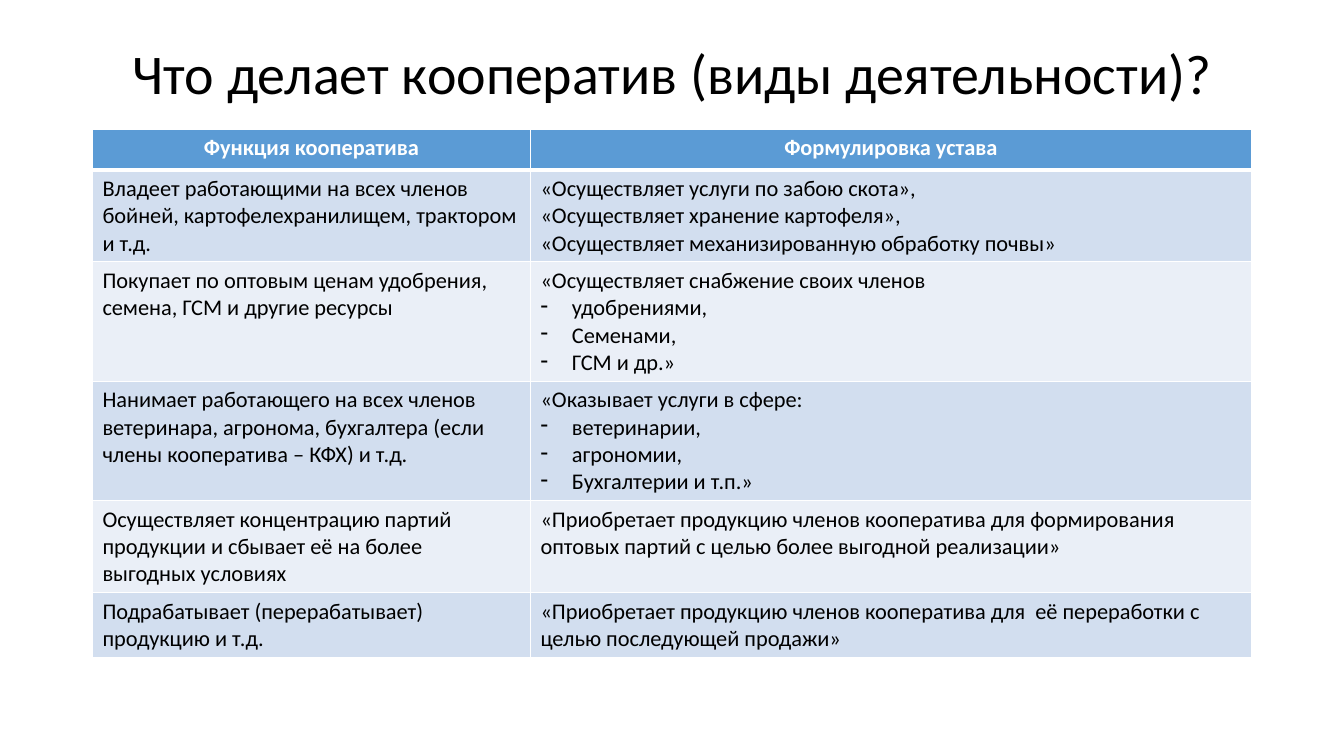
from dataclasses import dataclass

from lxml import etree
from pptx import Presentation
from pptx import util as u
from pptx.dml import color
from pptx.enum import text
from pptx.oxml import ns


@dataclass(frozen=True)
class Theme:
    font: str = "Calibri"
    title_size: int = 40
    table_size: int = 16
    ink: str = "000000"
    paper: str = "FFFFFF"
    header_fill: str = "5B9BD5"
    band_fills: tuple[str, str] = ("D2DEEF", "EAEFF7")
    thin_border: int = 1
    header_border: int = 3


@dataclass(frozen=True)
class Activity:
    function: str
    charter: tuple[str, ...]
    line_count: int
    items: tuple[str, ...] = ()


THEME = Theme()
LEFT, WIDTH = u.Cm(2.33), u.Cm(29.21)
COLUMN_WIDTHS = (u.Cm(11.04), u.Cm(18.17))
HEADER_HEIGHT = u.Cm(1.03)
LINE_HEIGHT, CELL_PADDING = u.Cm(0.69), u.Cm(0.25)
ITEM_INDENT = u.Cm(0.79)

TITLE = "Что делает кооператив (виды деятельности)?"
HEADINGS = ("Функция кооператива", "Формулировка устава")
ACTIVITIES = (
    Activity(
        "Владеет работающими на всех членов бойней, картофелехранилищем, трактором и т.д.",
        ("«Осуществляет услуги по забою скота»,",
         "«Осуществляет хранение картофеля»,",
         "«Осуществляет механизированную обработку почвы»"),
        3),
    Activity(
        "Покупает по оптовым ценам удобрения, семена, ГСМ и другие ресурсы",
        ("«Осуществляет снабжение своих членов",),
        4, ("удобрениями,", "Семенами,", "ГСМ и др.»")),
    Activity(
        "Нанимает работающего на всех членов ветеринара, агронома, бухгалтера "
        "(если члены кооператива – КФХ) и т.д.",
        ("«Оказывает услуги в сфере:",),
        4, ("ветеринарии,", "агрономии,", "Бухгалтерии и т.п.»")),
    Activity(
        "Осуществляет концентрацию партий продукции и сбывает её на более выгодных условиях",
        ("«Приобретает продукцию членов кооператива для формирования оптовых партий "
         "с целью более выгодной реализации»",),
        3),
    Activity(
        "Подрабатывает (перерабатывает) продукцию и т.д.",
        ("«Приобретает продукцию членов кооператива для  её переработки "
         "с целью последующей продажи»",),
        2),
)


def write_paragraph(paragraph, words: str, size: int, ink: str,
                    bold: bool = False, centred: bool = False) -> None:
    run = paragraph.add_run()
    run.text = words
    font_format = {"name": THEME.font, "size": u.Pt(size), "bold": bold}
    for attribute, value in font_format.items():
        setattr(run.font, attribute, value)
    run.font.color.rgb = color.RGBColor.from_string(ink)
    paragraph.alignment = text.PP_ALIGN.CENTER if centred else text.PP_ALIGN.LEFT


def add_dash(paragraph) -> None:
    """Turn the paragraph into a list item with a hanging dash."""
    properties = paragraph._p.get_or_add_pPr()
    properties.set("marL", str(ITEM_INDENT))
    properties.set("indent", str(-ITEM_INDENT))
    etree.SubElement(properties, ns.qn("a:buFontTx"))
    etree.SubElement(properties, ns.qn("a:buChar"), char="-")


def paint_cell(cell, fill: str, top: int, bottom: int) -> None:
    """Fill the cell and edge it; top and bottom are border widths in points."""
    cell.fill.solid()
    cell.fill.fore_color.rgb = color.RGBColor.from_string(fill)
    widths = {"a:lnL": THEME.thin_border, "a:lnR": THEME.thin_border,
              "a:lnT": top, "a:lnB": bottom}
    properties = cell._tc.get_or_add_tcPr()
    for position, (side, width) in enumerate(widths.items()):
        border = etree.Element(ns.qn(side), w=str(u.Pt(width)))
        line_fill = etree.SubElement(border, ns.qn("a:solidFill"))
        etree.SubElement(line_fill, ns.qn("a:srgbClr"), val=THEME.paper)
        properties.insert(position, border)


def write_body_cell(cell, lines: tuple[str, ...], items: tuple[str, ...] = ()) -> None:
    frame = cell.text_frame
    for index, words in enumerate(lines + items):
        paragraph = frame.add_paragraph() if index else frame.paragraphs[0]
        write_paragraph(paragraph, words, THEME.table_size, THEME.ink)
        if index >= len(lines):
            add_dash(paragraph)


def add_title(slide) -> None:
    frame = slide.shapes.add_textbox(LEFT, u.Cm(1.02), WIDTH, u.Cm(1.83)).text_frame
    frame_format = {"word_wrap": True, "vertical_anchor": text.MSO_ANCHOR.MIDDLE}
    for attribute, value in frame_format.items():
        setattr(frame, attribute, value)
    heading = frame.paragraphs[0]
    heading.line_spacing = 0.9
    write_paragraph(heading, TITLE, THEME.title_size, THEME.ink, centred=True)


def add_activity_table(slide) -> None:
    heights = [HEADER_HEIGHT] + [
        CELL_PADDING + LINE_HEIGHT * activity.line_count for activity in ACTIVITIES]
    table = slide.shapes.add_table(
        len(heights), len(HEADINGS), LEFT, u.Cm(3.25), WIDTH, sum(heights)).table
    for column, width in zip(table.columns, COLUMN_WIDTHS):
        column.width = width
    for row, height in zip(table.rows, heights):
        row.height = height

    for cell, heading in zip(table.rows[0].cells, HEADINGS):
        write_paragraph(cell.text_frame.paragraphs[0], heading, THEME.table_size,
                        THEME.paper, bold=True, centred=True)
        paint_cell(cell, THEME.header_fill, THEME.thin_border, THEME.header_border)

    for index, activity in enumerate(ACTIVITIES):
        function_cell, charter_cell = table.rows[index + 1].cells
        write_body_cell(function_cell, (activity.function,))
        write_body_cell(charter_cell, activity.charter, activity.items)
        top = THEME.thin_border if index else THEME.header_border
        for cell in (function_cell, charter_cell):
            paint_cell(cell, THEME.band_fills[index % 2], top, THEME.thin_border)


def main() -> None:
    deck = Presentation()
    deck.slide_width, deck.slide_height = u.Cm(33.87), u.Cm(19.05)
    slide = deck.slides.add_slide(deck.slide_layouts[6])
    add_title(slide)
    add_activity_table(slide)
    deck.save("out.pptx")


if __name__ == "__main__":
    main()
